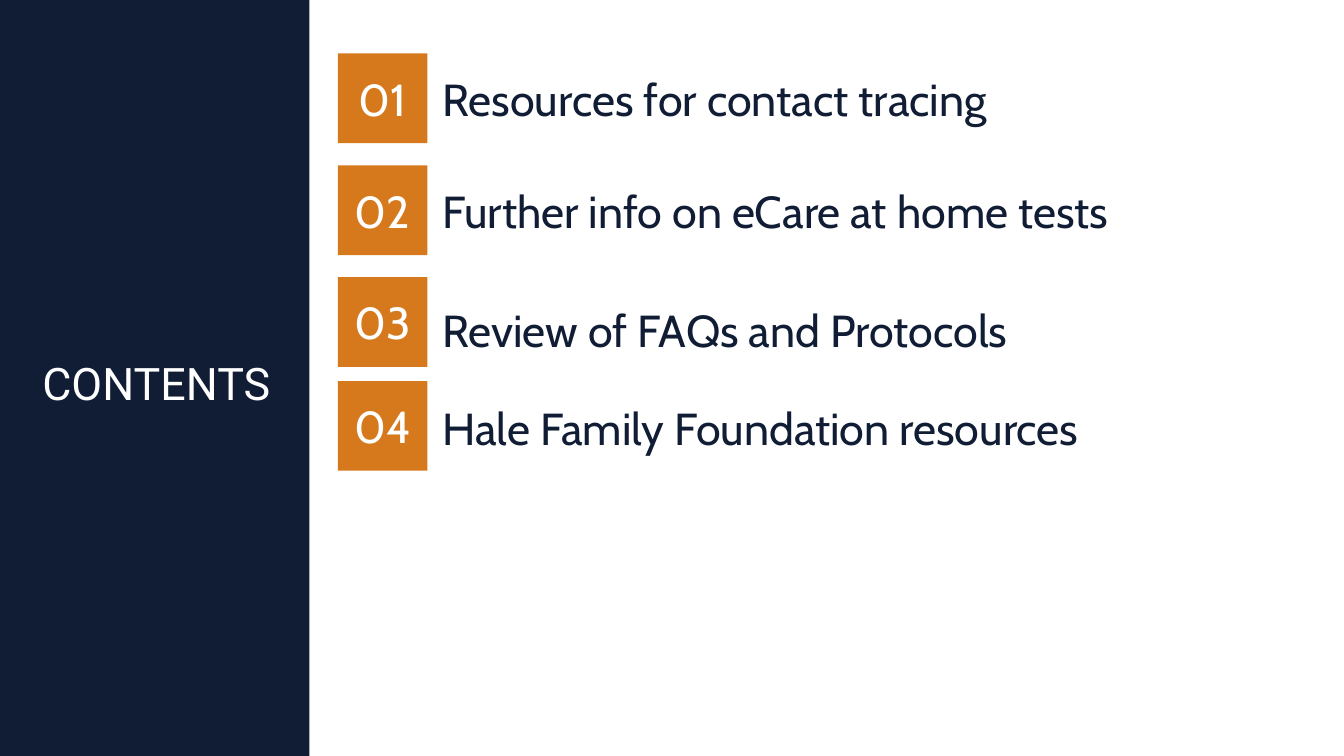
import pptx
import pptx.util
import pptx.dml.color
import pptx.enum.shapes
import pptx.enum.text

Inches = pptx.util.Inches
ANCHOR = pptx.enum.text.MSO_ANCHOR
ALIGN = pptx.enum.text.PP_ALIGN
RECTANGLE = pptx.enum.shapes.MSO_SHAPE.RECTANGLE

COLORS = {"navy": "101D35", "orange": "D6791C", "white": "FFFFFF"}
SLIDE_W, SLIDE_H = 13.33, 7.5
PANEL_W = 3.07
NUMBER_X, NUMBER_SIZE = 3.35, 0.89
TOPIC_X, TOPIC_W = 4.29, 8.73
FIRST_ROW, ROW_STEP = 0.53, 1.11
FRAME_FORMAT = {
    "word_wrap": True,
    "vertical_anchor": ANCHOR.MIDDLE,
    "auto_size": pptx.enum.text.MSO_AUTO_SIZE.NONE,
    "margin_left": Inches(0.1),
    "margin_right": Inches(0.1),
    "margin_top": Inches(0.05),
    "margin_bottom": Inches(0.05),
}

# Topic, upward shift of its row, downward shift of its text within the row
TOPICS = [
    ("Resources for contact tracing", 0, 0),
    ("Further info on eCare at home tests", 0, 0),
    ("Review of FAQs and Protocols", 0, 0.07),
    ("Hale Family Foundation resources", 0.08, 0.02),
]


def rgb(color):
    return pptx.dml.color.RGBColor.from_string(COLORS[color])


def set_formats(target, formats):
    for name, value in formats.items():
        setattr(target, name, value)


def write(holder, words, font, color, align=ALIGN.LEFT, line_spacing=1.0):
    frame = holder.text_frame
    set_formats(frame, FRAME_FORMAT)
    frame.text = words
    paragraph = frame.paragraphs[0]
    set_formats(paragraph, {"alignment": align, "line_spacing": line_spacing,
                            "space_before": pptx.util.Pt(0)})
    run_font = paragraph.runs[0].font
    set_formats(run_font, {"name": font, "size": pptx.util.Pt(32), "bold": False})
    run_font.color.rgb = rgb(color)


def add_block(shapes, color, *bounds):
    block = shapes.add_shape(RECTANGLE, *map(Inches, bounds))
    block.shadow.inherit = False
    block.fill.solid()
    block.fill.fore_color.rgb = rgb(color)
    block.line.fill.background()
    return block


def add_side_panel(slide):
    """Place the panel behind the title placeholder."""
    panel = add_block(slide.shapes, "navy", 0, 0, PANEL_W, SLIDE_H)
    slide.shapes.title.element.addprevious(panel.element)


def format_title(title):
    set_formats(title, {"left": Inches(0.32), "top": Inches(3.1),
                        "width": Inches(2.76), "height": Inches(1.45)})
    write(title, "CONTENTS", "Roboto", "white", line_spacing=0.9)


def add_entry(slide, number, topic, top, text_shift):
    entry = slide.shapes.add_group_shape().shapes
    badge = add_block(entry, "orange", NUMBER_X, top, NUMBER_SIZE, NUMBER_SIZE)
    write(badge, f"{number:02d}", "Cabin", "white", ALIGN.CENTER)
    label = entry.add_textbox(*map(Inches, (TOPIC_X, top + text_shift, TOPIC_W, NUMBER_SIZE)))
    write(label, topic, "Cabin", "navy")


def main():
    deck = pptx.Presentation()
    deck.slide_width, deck.slide_height = Inches(SLIDE_W), Inches(SLIDE_H)
    slide = deck.slides.add_slide(deck.slide_layouts[5])
    slide.background.fill.solid()
    slide.background.fill.fore_color.rgb = rgb("white")
    add_side_panel(slide)
    format_title(slide.shapes.title)
    for row, (topic, row_shift, text_shift) in enumerate(TOPICS):
        add_entry(slide, row + 1, topic, FIRST_ROW + row * ROW_STEP - row_shift, text_shift)
    deck.save("out.pptx")


if __name__ == "__main__":
    main()
